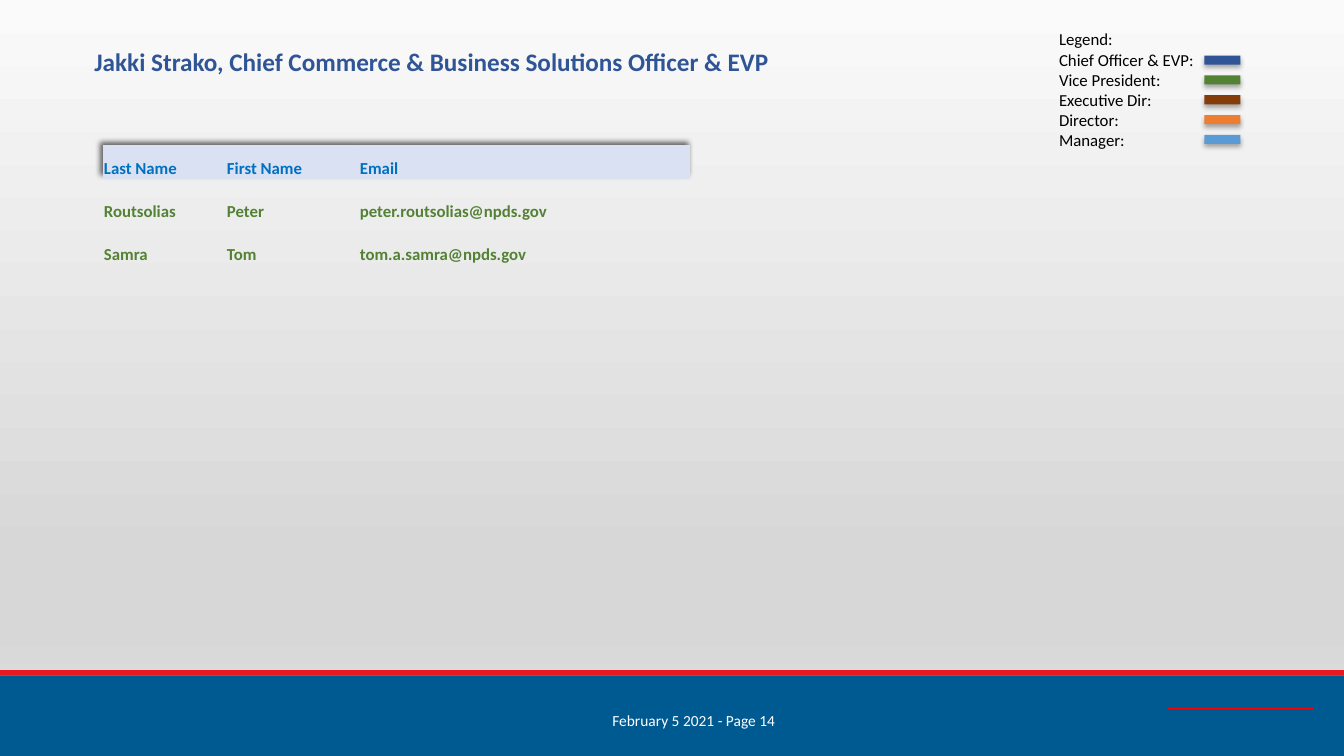
from pptx import Presentation
from pptx.dml.color import RGBColor
from pptx.enum.shapes import MSO_CONNECTOR, MSO_SHAPE
from pptx.enum.text import MSO_ANCHOR, PP_ALIGN
from pptx.oxml import parse_xml
from pptx.oxml.ns import nsdecls
from pptx.util import Cm, Pt

RECT, STRAIGHT = MSO_SHAPE.RECTANGLE, MSO_CONNECTOR.STRAIGHT
LEFT, CENTER = PP_ALIGN.LEFT, PP_ALIGN.CENTER
BOTTOM = MSO_ANCHOR.BOTTOM

NAVY, GREEN, BROWN, ORANGE, SKY = "2F5597", "548235", "843C0B", "ED7D31", "5B9BD5"
WIDTH, HEIGHT = 33.87, 19.05
NO_STYLE = "{2D5ABB26-0587-4C30-8999-92F81FD0307C}"


def rgb(value):
    return RGBColor.from_string(value)


def effects(shadow=None):
    """Effect list, empty or with (blur pt, distance pt, angle, opacity %)."""
    inner = ""
    if shadow:
        blur, dist, angle, opacity = shadow
        inner = (f'<a:outerShdw blurRad="{Pt(blur)}" dist="{Pt(dist)}" '
                 f'dir="{angle * 60000}" algn="ctr" rotWithShape="0">'
                 f'<a:srgbClr val="000000"><a:alpha val="{opacity * 1000}"/>'
                 '</a:srgbClr></a:outerShdw>')
    return parse_xml(f'<a:effectLst {nsdecls("a")}>{inner}</a:effectLst>')


class Deck:
    font = "Calibri"

    def __init__(self):
        self.prs = Presentation()
        self.prs.slide_width, self.prs.slide_height = Cm(WIDTH), Cm(HEIGHT)
        self.s = self.prs.slides.add_slide(self.prs.slide_layouts[6])

    def background(self, stops, angle):
        fill = self.s.background.fill
        fill.gradient()
        fill.gradient_angle = angle
        gs_list = self.s.element.xpath(".//a:gsLst")[0]
        for gs in list(gs_list):
            gs_list.remove(gs)
        for pos, color in stops:
            gs_list.append(parse_xml(
                f'<a:gs {nsdecls("a")} pos="{pos * 1000}">'
                f'<a:srgbClr val="{color}"/></a:gs>'))

    def fill_text(self, tf, lines, color, align=LEFT, **fmt):
        for i, line in enumerate(lines):
            p = tf.paragraphs[0] if i == 0 else tf.add_paragraph()
            p.alignment = align
            r = p.add_run()
            r.text = line
            for name, value in {"name": self.font, **fmt}.items():
                setattr(r.font, name, value)
            r.font.color.rgb = rgb(color)

    def text(self, x, y, w, h, lines, color, **fmt):
        tf = self.s.shapes.add_textbox(Cm(x), Cm(y), Cm(w), Cm(h)).text_frame
        tf.word_wrap = True
        self.fill_text(tf, lines, color, **fmt)

    def bar(self, x, y, w, h, color, shadow=None):
        sp = self.s.shapes.add_shape(RECT, Cm(x), Cm(y), Cm(w), Cm(h))
        sp.fill.solid()
        sp.fill.fore_color.rgb = rgb(color)
        sp.line.fill.background()
        sp.shadow.inherit = False
        if shadow:
            empty = sp.element.spPr.find("{*}effectLst")
            sp.element.spPr.replace(empty, effects(shadow))

    def line(self, x1, y1, x2, y2, color, width):
        cx = self.s.shapes.add_connector(STRAIGHT, Cm(x1), Cm(y1), Cm(x2), Cm(y2))
        cx.line.color.rgb = rgb(color)
        cx.line.width = Pt(width)
        cx.element.spPr.append(effects())

    def table(self, x, y, cols, heights, rows, head_fill, head_color, color, shadow):
        frame = self.s.shapes.add_table(len(heights), len(cols), Cm(x), Cm(y),
                                        Cm(sum(cols)), Cm(sum(heights)))
        table = frame.table
        table.first_row = table.horz_banding = False
        style = frame.element.xpath(".//a:tableStyleId")[0]
        style.text = NO_STYLE
        style.addprevious(effects(shadow))
        for col, width in zip(table.columns, cols):
            col.width = Cm(width)
        for i, height in enumerate(heights):
            table.rows[i].height = Cm(height)
            for j, cell in enumerate(table.rows[i].cells):
                margins = {"margin_left": 0.03, "margin_right": 0.03,
                           "margin_top": 0.03, "margin_bottom": 0}
                for name, value in margins.items():
                    setattr(cell, name, Cm(value))
                cell.vertical_anchor = BOTTOM
                if i == 0:
                    cell.fill.solid()
                    cell.fill.fore_color.rgb = rgb(head_fill)
                else:
                    cell.fill.background()
                if i < len(rows):
                    self.fill_text(cell.text_frame, [rows[i][j]],
                                   color if i else head_color, size=Pt(12), bold=True)


def main():
    deck = Deck()
    deck.background([(0, "FAFAFA"), (74, "D7D7D7"), (83, "D7D7D7"), (100, "E4E4E4")], 270)

    # Footer
    deck.bar(0, 16.89, WIDTH, 0.13, "E71921")
    deck.bar(0, 17.02, WIDTH, 2.03, "005A92")
    deck.text(13.84, 17.8, 7.29, 0.73, ["February 5 2021 - Page 14"], "FFFFFF",
              align=CENTER, size=Pt(11))
    deck.line(29.44, 17.86, 33.12, 17.86, "FF0000", 1)

    # Legend
    legend = [("Chief Officer & EVP:", NAVY), ("Vice President:", GREEN),
              ("Executive Dir:", BROWN), ("Director:", ORANGE), ("Manager:", SKY)]
    deck.text(26.44, 0.61, 6.63, 3.33, ["Legend:"] + [label for label, _ in legend],
              "000000", size=Pt(12))
    for i, (_, color) in enumerate(legend):
        deck.bar(30.35, 1.4 + 0.5 * i, 0.91, 0.23, color, shadow=(3.5, 2.2, 90, 32))

    # Title
    deck.text(2.13, 1.04, 18.03, 1.02,
              ["Jakki Strako, Chief Commerce & Business Solutions Officer & EVP"],
              NAVY, size=Pt(18), bold=True)

    # Contacts
    contacts = [("Last Name", "First Name", "Email"),
                ("Routsolias", "Peter", "peter.routsolias@npds.gov"),
                ("Samra", "Tom", "tom.a.samra@npds.gov")]
    deck.table(2.59, 3.66, [3.1, 3.35, 8.36], [0.84, 1.09, 1.09, 1.09], contacts,
               "D9E1F2", "0070C0", GREEN, shadow=(4, 3, 225, 60))

    deck.prs.save("out.pptx")


if __name__ == "__main__":
    main()
